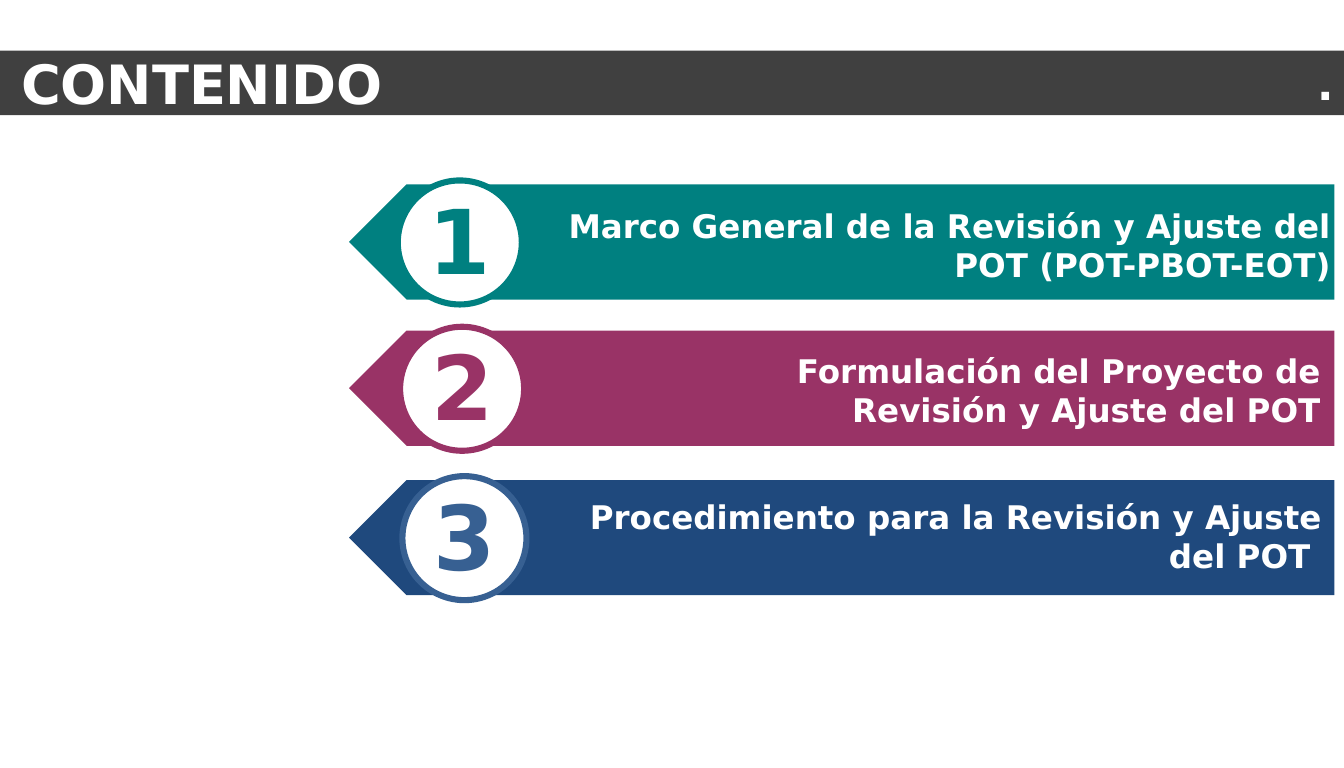
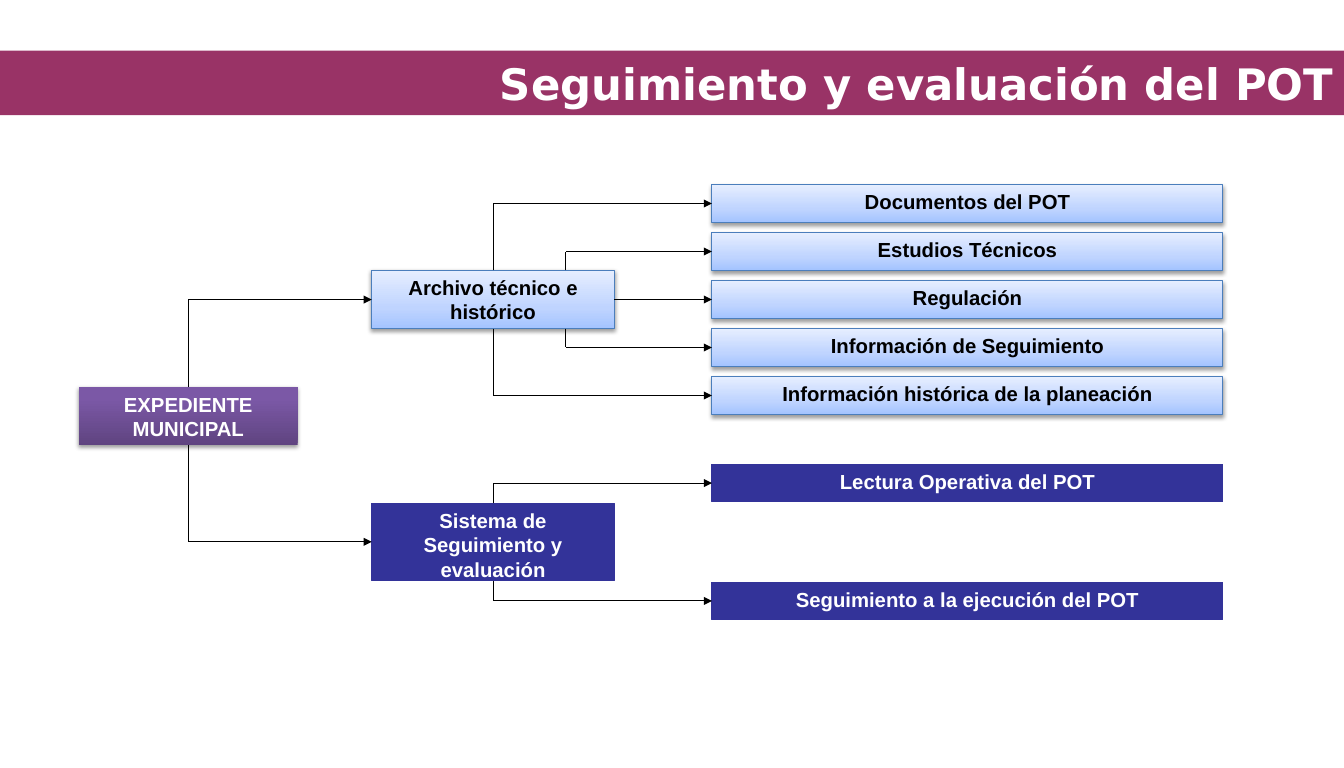
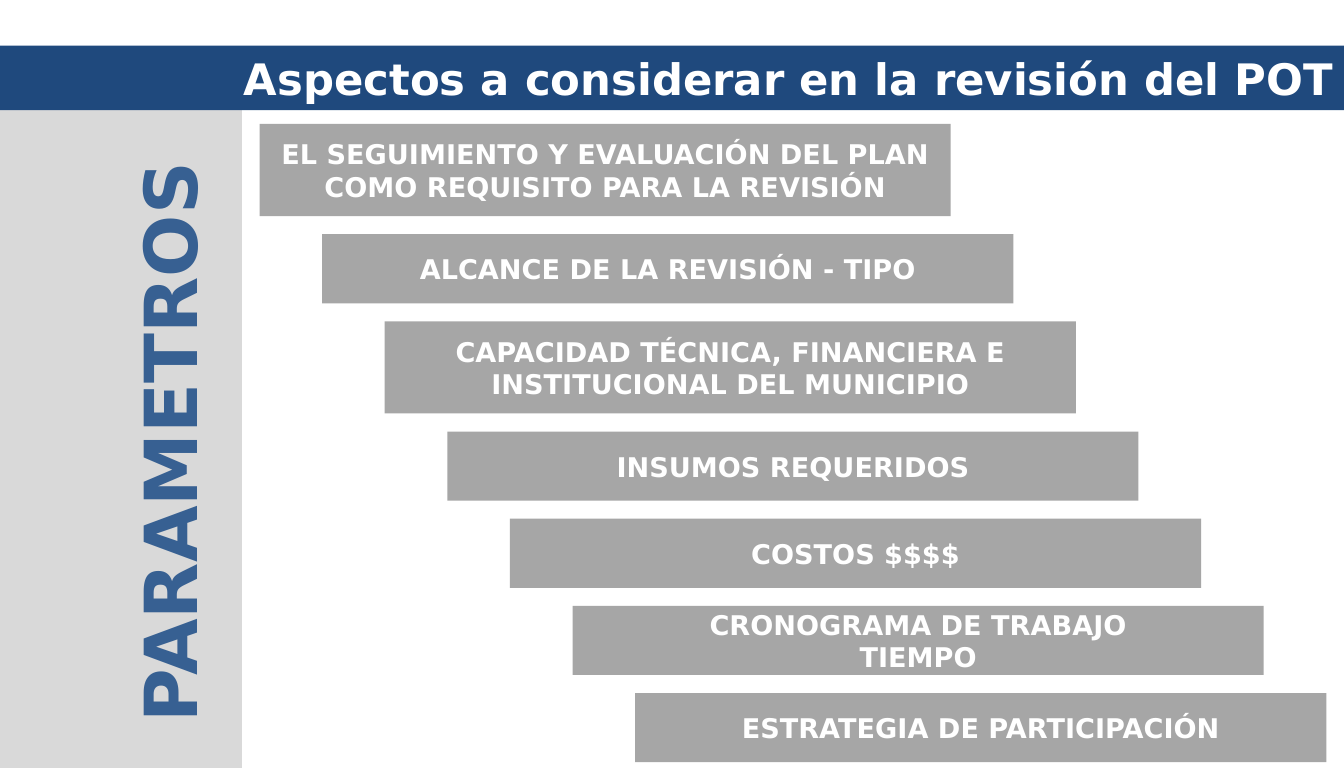
"""Build three slides on the revision and follow-up of the POT."""
import copy

import lxml.etree as etree
import pptx
import pptx.dml.color
import pptx.enum.shapes
import pptx.enum.text
import pptx.oxml.ns
import pptx.util

Cm = pptx.util.Cm
Pt = pptx.util.Pt
qn = pptx.oxml.ns.qn
FORM = pptx.enum.shapes.MSO_SHAPE
ALIGN = pptx.enum.text.PP_ALIGN
ANCHOR = pptx.enum.text.MSO_ANCHOR
rgb = pptx.dml.color.RGBColor.from_string

HUES = {
    "white": "FFFFFF", "black": "000000", "teal": "008080", "plum": "993366",
    "navy": "1F497D", "steel": "376092", "dark": "404040", "pale": "D9D9D9",
    "gray": "A6A6A6", "indigo": "333399", "edge": "4B7EBC",
}
FADES = {
    "violet": [(0, "5F4480"), (0.8, "7B58A6"), (1, "7C57A8")],
    "sky": [(0, "A4C4FF"), (0.35, "BFD4FF"), (1, "E6EEFF")],
}


def draw(page, form, spot, fill, line=None, width=0.75):
    shape = page.shapes.add_shape(form, *[Cm(n) for n in spot])
    shape.shadow.inherit = False
    if fill in FADES:
        shape.fill.gradient()
        shape.fill.gradient_angle = 90
        props = shape._element.spPr
        stops = props.find(".//" + qn("a:gsLst"))
        stops.append(copy.deepcopy(stops[0]))
        for stop, (place, hue) in zip(shape.fill.gradient_stops, FADES[fill]):
            stop.position = place
            stop.color.rgb = rgb(hue)
        shade = etree.SubElement(
            props.find(qn("a:effectLst")), qn("a:outerShdw"),
            blurRad="39400", dist="20300", dir="5400000", rotWithShape="0")
        tone = etree.SubElement(shade, qn("a:srgbClr"), val=HUES["black"])
        etree.SubElement(tone, qn("a:alpha"), val="38000")
    else:
        shape.fill.solid()
        shape.fill.fore_color.rgb = rgb(HUES[fill])
    if line:
        shape.line.color.rgb = rgb(HUES[line])
        shape.line.width = Pt(width)
    else:
        shape.line.fill.background()
    return shape


def write(shape, text, size, hue="white", font="DejaVu Sans", align=ALIGN.CENTER,
          anchor=ANCHOR.MIDDLE, pad=(0.25, 0.13, 0.25, 0.13), wrap=True):
    frame = shape.text_frame
    frame.word_wrap = wrap
    frame.vertical_anchor = anchor
    (frame.margin_left, frame.margin_top,
     frame.margin_right, frame.margin_bottom) = [Cm(n) for n in pad]
    frame.text = text
    for para in frame.paragraphs:
        para.alignment = align
        para.font.size = Pt(size)
        para.font.name = font
        para.font.bold = True
        para.font.color.rgb = rgb(HUES[hue])


deck = pptx.Presentation()
deck.slide_width, deck.slide_height = Cm(35), Cm(20)
index, chart, steps = [deck.slides.add_slide(deck.slide_layouts[6]) for _ in range(3)]
WIDE = (0.3, 0.15, 0.3, 0.15)

topics = [
    ("Marco General de la Revisión y Ajuste del POT (POT-PBOT-EOT)",
     "teal", "teal", 6.3, 10.36, 5.21, 13.23, 21.72),
    ("Formulación del Proyecto de Revisión y Ajuste del POT",
     "plum", "plum", 10.11, 10.42, 8.99, 16.33, 18.36),
    ("Procedimiento para la Revisión y Ajuste del POT ",
     "navy", "steel", 14, 10.48, 12.8, 14.43, 20.29),
]
for rank, (text, fill, ring, mid, left, top, start, width) in enumerate(topics, 1):
    flag = draw(index, FORM.SNIP_2_SAME_RECTANGLE,
                (20.42, mid - 12.83, 3, 25.66), fill)
    flag.adjustments[0], flag.adjustments[1] = 0.5, 0
    flag.rotation = 270
    label = index.shapes.add_textbox(Cm(start), Cm(top), Cm(width), Cm(2.36))
    write(label, text, 24, align=ALIGN.RIGHT, anchor=ANCHOR.TOP, pad=WIDE)
    disc = draw(index, FORM.FLOWCHART_CONNECTOR,
                (left, mid - 1.6, 3.23, 3.23), "white", ring, 4.5)
    write(disc, str(rank), 66, ring, pad=(0, 0, 0, 0.2), wrap=False)

leaves = [("Documentos del POT", "sky"), ("Estudios Técnicos", "sky"),
          ("Regulación", "sky"), ("Información de Seguimiento", "sky"),
          ("Información histórica de la planeación", "sky"),
          ("Lectura Operativa del POT", "indigo"),
          ("Seguimiento a la ejecución del POT", "indigo")]
tops = [4.81 + 1.25 * n for n in range(5)] + [12.09, 15.16]
nodes = [
    ("EXPEDIENTE MUNICIPAL", "violet", (2.06, 10.08, 5.69, 1.52)),
    ("Archivo técnico e histórico", "sky", (9.68, 7.04, 6.32, 1.52)),
    ("Sistema de Seguimiento y evaluación", "indigo", (9.68, 13.1, 6.32, 2.02)),
] + [(text, fill, (18.54, top, 13.31, 0.98))
     for (text, fill), top in zip(leaves, tops)]
edges = {"violet": None, "sky": "edge", "indigo": "indigo"}
boxes = []
for text, fill, spot in nodes:
    box = draw(chart, FORM.RECTANGLE, spot, fill, edges[fill])
    write(box, text, 15, "black" if fill == "sky" else "white",
          font="Arial", anchor=ANCHOR.TOP)
    boxes.append(box)

root, file, system, *ends = boxes
links = [(root, file, 0.5), (root, system, 0.5)]
links += [(file, end, part) for end, part in zip(ends, (0.5, 0.8, 1, 0.8, 0.5))]
links += [(system, end, 0.5) for end in ends[5:]]
straight = pptx.enum.shapes.MSO_CONNECTOR.STRAIGHT
for start, end, part in links:
    x = start.left + round(start.width * part)
    y = end.top + end.height // 2
    arrow = chart.shapes.add_connector(straight, x, y, end.left, y)
    arrow.end_connect(end, 1)
    lines = [arrow]
    if part == 1:
        arrow.begin_connect(start, 3)
    else:
        side = 0 if y < start.top else 2
        base = start.top + start.height * side // 2
        stem = chart.shapes.add_connector(straight, x, base, x, y)
        if part == 0.5:
            stem.begin_connect(start, side)
        lines.append(stem)
    for line in lines:
        line.line.color.rgb = rgb(HUES["black"])
        line.line.width = Pt(0.75)
        props = line._element.spPr
        if line is arrow:
            etree.SubElement(props.find(qn("a:ln")), qn("a:tailEnd"), type="triangle")
        etree.SubElement(props, qn("a:effectLst"))

draw(steps, FORM.RECTANGLE, (0, 1.42, 6.3, 18.58), "pale")
side = steps.shapes.add_textbox(Cm(-3.48), Cm(10.49), Cm(15.75), Cm(2.06))
side.rotation = 270
write(side, "PARAMETROS", 54, "steel", pad=WIDE)
stairs = [
    ("EL SEGUIMIENTO Y EVALUACIÓN DEL PLAN COMO REQUISITO PARA LA REVISIÓN", 2.4),
    ("ALCANCE DE LA REVISIÓN - TIPO", 1.8),
    ("CAPACIDAD TÉCNICA, FINANCIERA E INSTITUCIONAL DEL MUNICIPIO", 2.4),
    ("INSUMOS REQUERIDOS", 1.8),
    ("COSTOS $$$$", 1.8),
    ("CRONOGRAMA DE TRABAJO\nTIEMPO", 1.8),
    ("ESTRATEGIA DE PARTICIPACIÓN", 1.8),
]
top = 3.23
for rank, (text, tall) in enumerate(stairs):
    stair = draw(steps, FORM.RECTANGLE, (6.76 + 1.63 * rank, top, 18, tall), "gray")
    write(stair, text, 20, pad=WIDE)
    top += tall + 0.47

bands = [
    (index, ".", "dark", 1.32),
    (chart, "Seguimiento y evaluación del POT", "plum", 1.32),
    (steps, "Aspectos a considerar en la revisión del POT", "navy", 1.19),
]
for page, text, fill, top in bands:
    band = draw(page, FORM.RECTANGLE, (0, top, 35, 1.68), fill)
    write(band, text, 32, align=ALIGN.RIGHT)
title = index.shapes.add_textbox(Cm(0.3), Cm(1.19), Cm(10.29), Cm(1.96))
write(title, "CONTENIDO", 40, align=ALIGN.LEFT, anchor=ANCHOR.TOP, wrap=False)

deck.save("out.pptx")
